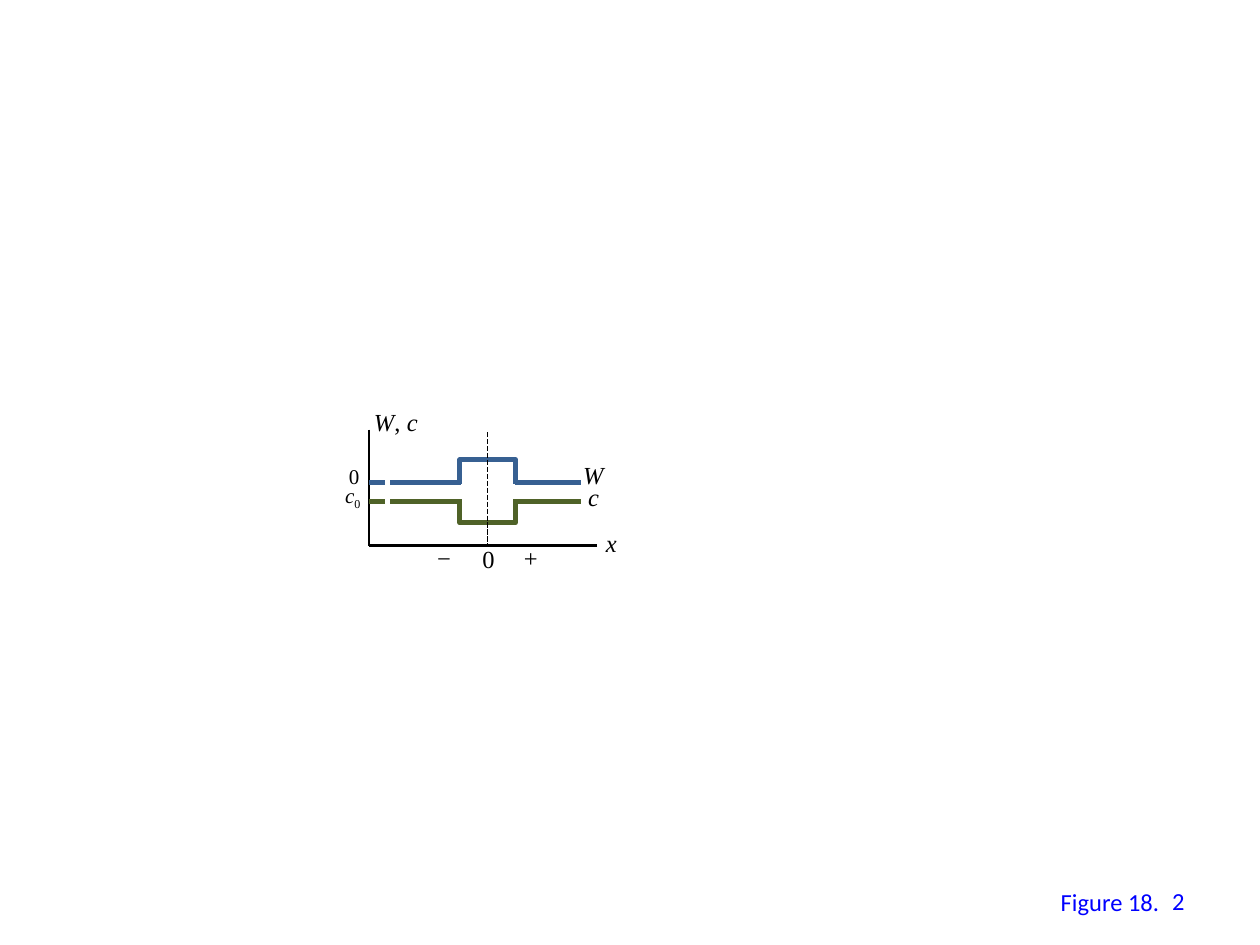
from dataclasses import dataclass

from lxml import etree
from pptx import Presentation
from pptx.dml.color import RGBColor
from pptx.enum.dml import MSO_LINE
from pptx.enum.shapes import MSO_CONNECTOR, MSO_SHAPE
from pptx.enum.text import MSO_ANCHOR, MSO_AUTO_SIZE, PP_ALIGN
from pptx.oxml.ns import qn
from pptx.util import Inches, Pt

DASH = MSO_LINE.SQUARE_DOT
LINE = MSO_CONNECTOR.STRAIGHT
RECT = MSO_SHAPE.RECTANGLE
FIT = MSO_AUTO_SIZE.SHAPE_TO_FIT_TEXT
MIDDLE = MSO_ANCHOR.MIDDLE
RIGHT = PP_ALIGN.RIGHT


@dataclass(frozen=True)
class Theme:
    black: str = "000000"
    white: str = "FFFFFF"
    work: str = "376092"
    conc: str = "4F6228"
    foot: str = "0000FF"
    serif: str = "Times New Roman"
    sans: str = "Calibri"
    size: int = 14
    small: int = 12
    axis: float = 1.5
    curve: float = 3
    mask: float = 4.5
    thin: float = 1


THEME = Theme()


def rgb(color):
    return RGBColor.from_string(color)


def add_line(slide, start, end, color, width, dash=None):
    line = slide.shapes.add_connector(LINE, *map(Inches, start + end))
    line.line.color.rgb = rgb(color)
    line.line.width = Pt(width)
    if dash:
        line.line.dash_style = dash
    props = line._element.find(qn("p:spPr"))
    etree.SubElement(props, qn("a:effectLst"))


def add_text(slide, place, runs, size=THEME.size, face=THEME.serif,
             color=THEME.black, wrap=False):
    """Each run is (text, italic, subscript)."""
    box = slide.shapes.add_textbox(*map(Inches, place))
    frame = box.text_frame
    frame.word_wrap = wrap
    if not wrap:
        frame.auto_size = FIT
    para = frame.paragraphs[0]
    para.font.size = Pt(size)
    para.font.name = face
    para.font.color.rgb = rgb(color)
    for text, slant, sub in runs:
        run = para.add_run()
        run.text = text
        if slant:
            run.font.italic = True
        if sub:
            run._r.get_or_add_rPr().set("baseline", "-25000")
    return frame


def add_curve(slide, level, top, gap, color):
    """Level line with a step; a white line opens the step's base."""
    add_line(slide, (2.93, level), (3.2, level), color, THEME.curve, DASH)
    step = slide.shapes.add_shape(
        RECT, *map(Inches, (3.65, top, 0.44, 0.17)))
    step.shadow.inherit = False
    step.fill.solid()
    step.fill.fore_color.rgb = rgb(THEME.white)
    step.line.color.rgb = rgb(color)
    step.line.width = Pt(THEME.curve)
    for left, right in ((4.09, 4.61), (3.14, 3.66)):
        add_line(slide, (left, level), (right, level), color, THEME.curve)
    add_line(slide, (3.67, gap), (4.07, gap), THEME.white, THEME.mask)


def main():
    deck = Presentation()
    deck.slide_width, deck.slide_height = Inches(10), Inches(7.5)
    slide = deck.slides.add_slide(deck.slide_layouts[6])

    # Axes
    base = (2.93, 4.33)
    add_line(slide, (4.74, 4.33), base, THEME.black, THEME.axis)
    add_line(slide, (2.93, 3.41), base, THEME.black, THEME.axis)

    # Axis and curve names
    for place, text in (
        ((4.71, 4.14, 0.34, 0.34), "x"),
        ((4.57, 3.78, 0.34, 0.34), "c"),
        ((4.53, 3.6, 0.42, 0.34), "W"),
    ):
        add_text(slide, place, [(text, True, False)])
    add_text(slide, (2.87, 3.18, 0.6, 0.34),
             [("W", True, False), (", ", False, False), ("c", True, False)])

    # Level labels
    add_text(slide, (2.67, 3.63, 0.29, 0.3),
             [("0", False, False)], THEME.small)
    add_text(slide, (2.64, 3.78, 0.37, 0.3),
             [("c", True, False), ("0", False, True)], THEME.small)

    # Curves, then the centre line over them
    add_curve(slide, 3.83, 3.65, 3.83, THEME.work)
    add_curve(slide, 3.98, 3.98, 3.97, THEME.conc)
    add_line(slide, (3.87, 3.43), (3.87, 4.33), THEME.black, THEME.thin, DASH)

    # Marks below the x axis
    for place, text in (
        ((3.73, 4.27, 0.3, 0.34), "0"),
        ((4.06, 4.26, 0.31, 0.34), "+"),
        ((3.37, 4.26, 0.31, 0.34), "−"),
    ):
        add_text(slide, place, [(text, False, False)])

    # Figure number
    add_text(slide, (8.32, 6.99, 0.99, 0.34), [("Figure 18.", False, False)],
             face=THEME.sans, color=THEME.foot)
    count = add_text(slide, (7.17, 6.95, 2.33, 0.4), [("2", False, False)],
                     face=THEME.sans, color=THEME.foot, wrap=True)
    count.vertical_anchor = MIDDLE
    count.paragraphs[0].alignment = RIGHT

    deck.save("out.pptx")


if __name__ == "__main__":
    main()
